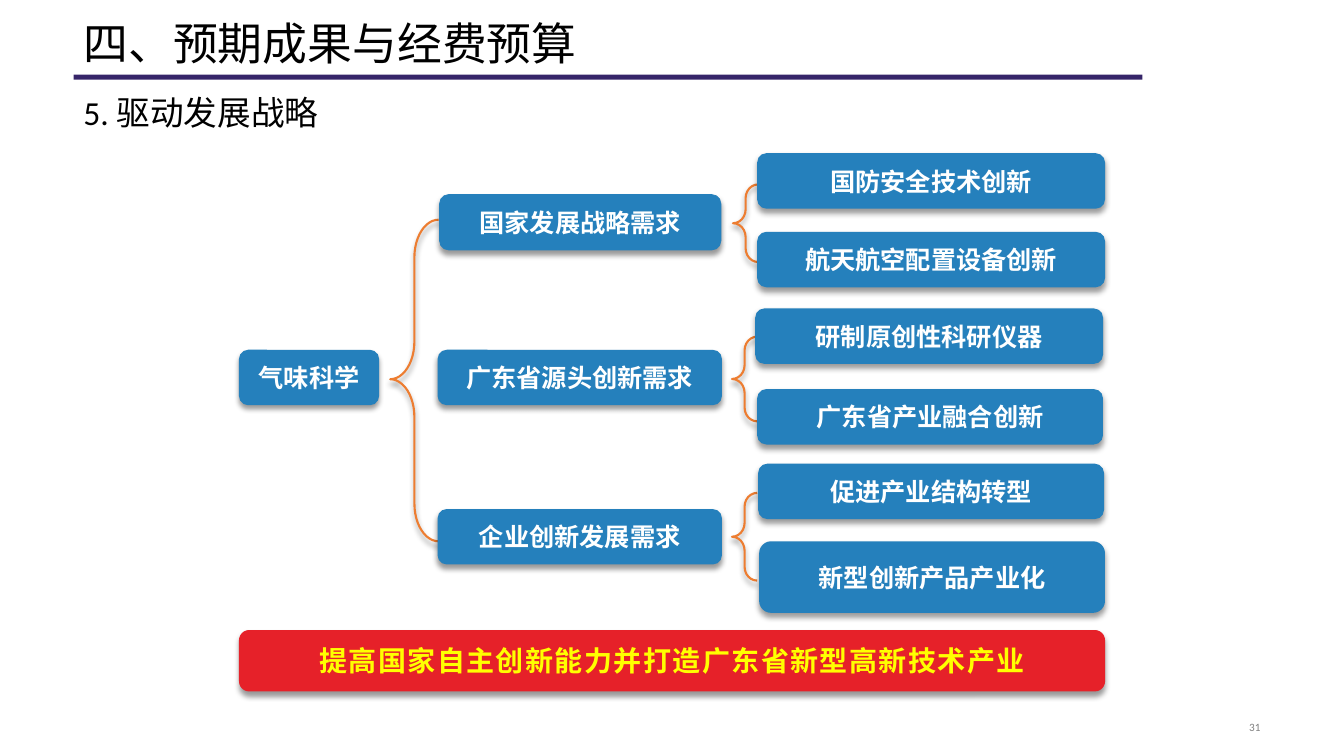
from dataclasses import dataclass

from lxml import etree
from pptx import Presentation
from pptx.dml.color import RGBColor
from pptx.enum.shapes import MSO_SHAPE
from pptx.enum.text import MSO_ANCHOR, PP_ALIGN
from pptx.oxml.ns import qn
from pptx.util import Inches, Pt

ROUNDED = MSO_SHAPE.ROUNDED_RECTANGLE
BRACE = MSO_SHAPE.LEFT_BRACE
RECTANGLE = MSO_SHAPE.RECTANGLE
LEFT, CENTER, RIGHT = PP_ALIGN.LEFT, PP_ALIGN.CENTER, PP_ALIGN.RIGHT
MIDDLE, BOTTOM = MSO_ANCHOR.MIDDLE, MSO_ANCHOR.BOTTOM

FONT = "Calibri"
BLUE, RED, ORANGE, NAVY = "2580BC", "E62129", "ED7D31", "362569"
WHITE, YELLOW, BLACK, GRAY = "FFFFFF", "FFFF00", "000000", "808080"


@dataclass(frozen=True)
class Area:
    left: float
    top: float
    width: float
    height: float = 0.55

    def lengths(self):
        return [Inches(n) for n in (self.left, self.top, self.width, self.height)]


@dataclass(frozen=True)
class TextStyle:
    size: float
    color: str
    bold: bool = False
    align: PP_ALIGN = LEFT
    anchor: MSO_ANCHOR = MIDDLE
    line_spacing: float = 1.0
    tracking: int = 0


@dataclass(frozen=True)
class Caption:
    text: str
    area: Area
    style: TextStyle


@dataclass(frozen=True)
class Node:
    text: str
    area: Area
    outlined: bool = False


@dataclass(frozen=True)
class Bracket:
    area: Area
    curve: float = 0.545
    point: float = 0.5


NODE_STYLE = TextStyle(18, WHITE, bold=True, align=CENTER)
BANNER_STYLE = TextStyle(20, YELLOW, bold=True, align=CENTER, tracking=100)

CAPTIONS = [
    Caption("四、预期成果与经费预算", Area(0.73, 0, 11.87, 0.75),
            TextStyle(32, BLACK, anchor=BOTTOM, line_spacing=0.9)),
    Caption("5. 驱动发展战略", Area(0.73, 0.86, 11.87, 0.55),
            TextStyle(24, BLACK, line_spacing=0.9)),
    Caption("31", Area(9.42, 7.1, 3.18, 0.23), TextStyle(8, GRAY, align=RIGHT)),
]

BRACKETS = [
    Bracket(Area(3.87, 2.18, 0.48, 3.19), 0.779, 0.496),
    Bracket(Area(7.27, 1.83, 0.25, 0.77)),
    Bracket(Area(7.26, 3.34, 0.25, 0.84)),
    Bracket(Area(7.26, 4.89, 0.25, 0.87)),
]

NODES = [
    # Root
    Node("气味科学", Area(2.37, 3.47, 1.39)),
    # Needs
    Node("国家发展战略需求", Area(4.36, 1.93, 2.79), outlined=True),
    Node("广东省源头创新需求", Area(4.34, 3.47, 2.82)),
    Node("企业创新发展需求", Area(4.34, 5.05, 2.82)),
    # Outcomes
    Node("国防安全技术创新", Area(7.51, 1.52, 3.45)),
    Node("航天航空配置设备创新", Area(7.51, 2.3, 3.45)),
    Node("研制原创性科研仪器", Area(7.49, 3.06, 3.45)),
    Node("广东省产业融合创新", Area(7.51, 3.86, 3.43)),
    Node("促进产业结构转型", Area(7.52, 4.6, 3.43)),
    Node("新型创新产品产业化", Area(7.53, 5.37, 3.43, 0.71)),
]


def rgb(value: str) -> RGBColor:
    return RGBColor.from_string(value)


def write(box, text: str, style: TextStyle) -> None:
    frame = box.text_frame
    frame.word_wrap = True
    frame.vertical_anchor = style.anchor
    para = frame.paragraphs[0]
    para.alignment = style.align
    para.line_spacing = style.line_spacing
    span = para.add_run()
    span.text = text
    span.font.name = FONT
    span.font.size = Pt(style.size)
    span.font.bold = style.bold
    span.font.color.rgb = rgb(style.color)
    if style.tracking:
        span.font._element.set("spc", str(style.tracking))


def add_shadow(shape) -> None:
    effects = shape._element.spPr.find(qn("a:effectLst"))
    shadow = etree.SubElement(
        effects, qn("a:outerShdw"), blurRad=str(Pt(4)), dist=str(Pt(3)),
        dir="5400000", algn="t", rotWithShape="0")
    color = etree.SubElement(shadow, qn("a:srgbClr"), val=BLACK)
    etree.SubElement(color, qn("a:alpha"), val="40000")


def add_figure(page, kind: MSO_SHAPE, area: Area, fill: str = "",
               line: str = "", line_width: float = 1.5, shadow: bool = True):
    shape = page.shapes.add_shape(kind, *area.lengths())
    if fill:
        shape.fill.solid()
        shape.fill.fore_color.rgb = rgb(fill)
    else:
        shape.fill.background()
    if line:
        shape.line.color.rgb = rgb(line)
        shape.line.width = Pt(line_width)
    else:
        shape.line.fill.background()
    shape.shadow.inherit = False
    if shadow:
        add_shadow(shape)
    return shape


def add_caption(page, caption: Caption) -> None:
    box = page.shapes.add_textbox(*caption.area.lengths())
    write(box, caption.text, caption.style)


def add_bracket(page, bracket: Bracket) -> None:
    brace = add_figure(page, BRACE, bracket.area, line=ORANGE)
    brace.adjustments[0] = bracket.curve
    brace.adjustments[1] = bracket.point


def add_node(page, node: Node) -> None:
    outline = BLUE if node.outlined else ""
    box = add_figure(page, ROUNDED, node.area, BLUE, outline, 0.5)
    write(box, node.text, NODE_STYLE)


def main() -> None:
    deck = Presentation()
    deck.slide_width, deck.slide_height = Inches(13.33), Inches(7.5)
    page = deck.slides.add_slide(deck.slide_layouts[6])

    # Heading rule and captions
    add_figure(page, RECTANGLE, Area(0.73, 0.74, 10.6, 0.05), NAVY, shadow=False)
    for caption in CAPTIONS:
        add_caption(page, caption)

    # Tree
    for bracket in BRACKETS:
        add_bracket(page, bracket)
    for node in NODES:
        add_node(page, node)

    # Conclusion banner
    banner = add_figure(page, ROUNDED, Area(2.37, 6.25, 8.59, 0.61), RED)
    write(banner, "提高国家自主创新能力并打造广东省新型高新技术产业", BANNER_STYLE)

    deck.save("out.pptx")


if __name__ == "__main__":
    main()
